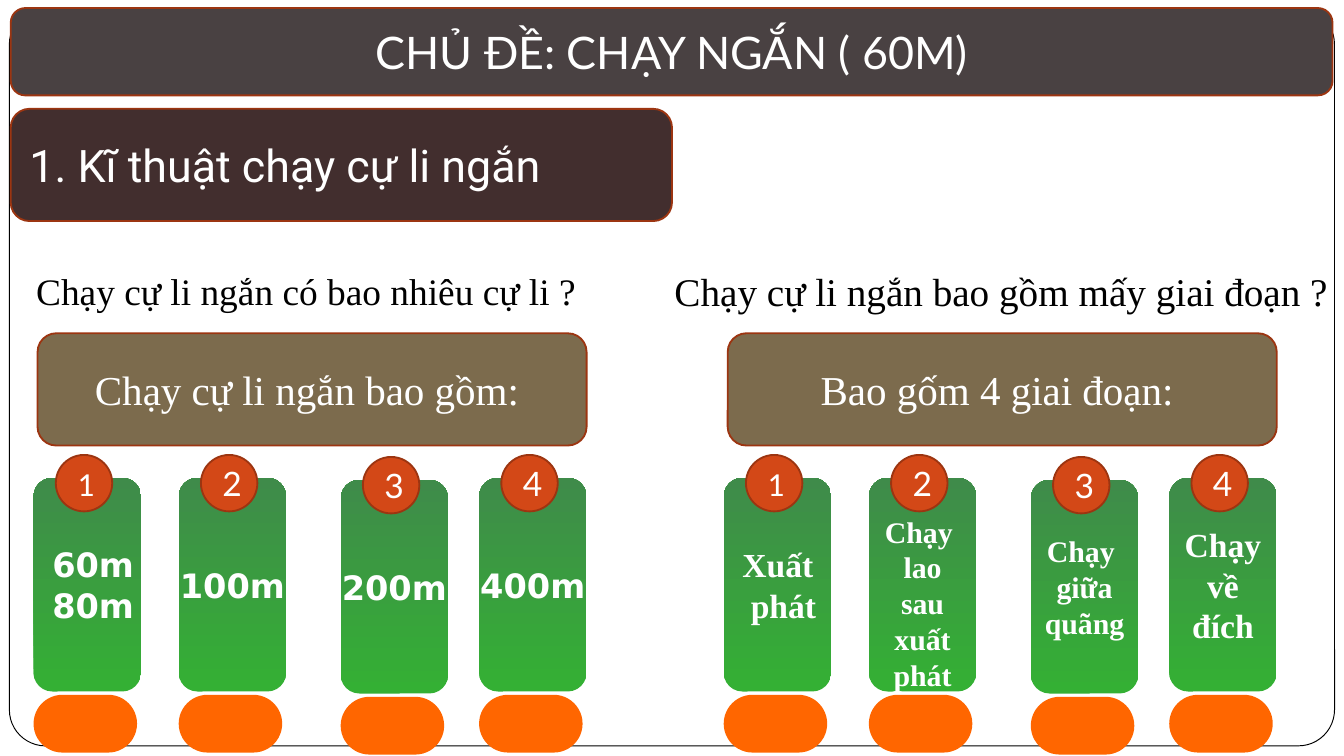
from pptx import Presentation
from pptx.dml.color import RGBColor
from pptx.enum.shapes import MSO_SHAPE as Preset
from pptx.enum.text import MSO_ANCHOR as Anchor, MSO_AUTO_SIZE as AutoSize, PP_ALIGN as Align
from pptx.util import Inches, Pt

CELL = Inches(0.1)
COLUMNS, ROWS = 100, 56.25
SERIF, SANS, LATO = "Times New Roman", "DejaVu Sans", "Lato"
WHITE, BLACK, RUST = "FFFFFF", "000000", "9C3511"
HEADER_AREA = (0.8, 0.6, 98.35, 6.5)
CARD_COLUMNS = (0, 10.8, 22.85, 33.15)
CARD_DROPS = (0, 0, 0.15, 0)
L, C = Align.LEFT, Align.CENTER

DISTANCES = [
    (("60m", "80m"), (L, L), 18),
    (("100m",), (C,), 18),
    (("200m",), (C,), 18),
    (("400m",), (C,), 18),
]
STAGES = [
    (("Xuất", " phát"), (L, C), 18),
    (("Chạy ", "lao", "sau", "xuất", "phát"), (C,) * 5, 16),
    (("Chạy ", "giữa", "quãng"), (C,) * 3, 16),
    (("Chạy", " về ", "đích"), (C,) * 3, 18),
]


def rgb(code):
    """Turn a hex string into a colour."""
    return RGBColor.from_string(code)


def grid(*cells):
    """Turn grid columns and rows into slide lengths."""
    return [round(cell * CELL) for cell in cells]


def paint(shape, fill, line=None, weight=1):
    """Give a shape its solid fill and its outline."""
    shape.fill.solid()
    shape.fill.fore_color.rgb = rgb(fill)
    if line:
        shape.line.color.rgb = rgb(line)
        shape.line.width = Pt(weight)
    else:
        shape.line.fill.background()


def write(shape, lines, size, font, aligns=(C,), color=WHITE, bold=False):
    """Set the lines of a shape and format each one."""
    frame = shape.text_frame
    frame.text = "\n".join(lines)
    for paragraph, align in zip(frame.paragraphs, aligns):
        paragraph.alignment = align
        for run in paragraph.runs:
            run.font.size = Pt(size)
            run.font.name = font
            run.font.bold = bold
            run.font.color.rgb = rgb(color)


def add_block(slide, preset, area, fill, line=None, weight=1, corner=None):
    """Add a flat preset shape with middle-anchored text."""
    block = slide.shapes.add_shape(preset, *grid(*area))
    block.shadow.inherit = False
    paint(block, fill, line, weight)
    if corner is not None:
        block.adjustments[0] = corner
    block.text_frame.word_wrap = True
    block.text_frame.vertical_anchor = Anchor.MIDDLE
    return block


def add_backdrop(slide):
    """Put the page frame and the header bar behind the title."""
    bar = add_block(slide, Preset.ROUNDED_RECTANGLE, HEADER_AREA, "494142", RUST)
    frame = add_block(slide, Preset.ROUNDED_RECTANGLE, (0.7, 0.6, 98.6, 54.9),
                      WHITE, BLACK, 0.5, 0.049)
    for backdrop in (bar, frame):
        slide.shapes._spTree.insert(2, backdrop._element)


def set_title(slide, text):
    """Write the title over the header bar."""
    title = slide.shapes.title
    title.left, title.top, title.width, title.height = grid(*HEADER_AREA)
    write(title, [text], 24, LATO)
    title.text_frame.vertical_anchor = Anchor.MIDDLE
    title.text_frame.auto_size = AutoSize.NONE


def add_question(slide, area, text, size):
    """Add a question above a panel."""
    question = slide.shapes.add_textbox(*grid(*area))
    question.text_frame.word_wrap = True
    question.text_frame.auto_size = AutoSize.SHAPE_TO_FIT_TEXT
    write(question, [text], size, SERIF, (L,), BLACK)


def add_card(slide, left, drop, number, answer, font):
    """Add a green card with its orange foot and numbered badge."""
    lines, aligns, size = answer
    card = add_block(slide, Preset.ROUNDED_RECTANGLE, (left, 35.55 + drop, 8, 15.9),
                     WHITE, corner=0.175)
    card.fill.gradient()
    card.fill.gradient_angle = 90
    for stop, color in zip(card.fill.gradient_stops, ("34B034", "3F8B4A")):
        stop.color.rgb = rgb(color)
    card.text_frame.word_wrap = False
    if len(lines) > 4:
        card.text_frame.margin_top, card.text_frame.margin_bottom = grid(2.7, 0)
    write(card, lines, size, font, aligns, bold=True)

    add_block(slide, Preset.ROUNDED_RECTANGLE, (left, 51.7 + drop, 7.7, 4.3),
              "FF6600", corner=0.5)
    badge = add_block(slide, Preset.OVAL, (left + 1.65, 33.85 + drop, 4.2, 4.2),
                      "D34817", RUST)
    write(badge, [str(number)], 18, "Calibri" if number == 1 else LATO)


def add_answers(slide, left, heading, answers, font):
    """Add a heading panel and its row of four cards."""
    panel = add_block(slide, Preset.ROUNDED_RECTANGLE, (left + 0.3, 24.8, 40.85, 8.35),
                      "7C6B4D", RUST)
    write(panel, [heading], 22, SERIF)
    cards = zip(CARD_COLUMNS, CARD_DROPS, answers)
    for number, (column, drop, answer) in enumerate(cards, 1):
        add_card(slide, left + column, drop, number, answer, font)


def add_section(slide, text):
    """Add the section heading under the header bar."""
    section = add_block(slide, Preset.ROUNDED_RECTANGLE, (0.8, 8.1, 49.2, 8.35),
                        "422E2E", RUST)
    write(section, [text], 24, "Roboto", (L,))


def main():
    """Build and save the lesson slide."""
    deck = Presentation()
    deck.slide_width, deck.slide_height = grid(COLUMNS, ROWS)
    slide = deck.slides.add_slide(deck.slide_layouts.get_by_name("Title Only"))
    add_backdrop(slide)
    set_title(slide, "CHỦ ĐỀ: CHẠY NGẮN ( 60M)")
    add_question(slide, (1.7, 19.5, 45.8, 4.4), "Chạy cự li ngắn có bao nhiêu cự li ?", 20)
    add_answers(slide, 2.5, "Chạy cự li ngắn bao gồm: ", DISTANCES, SANS)
    add_question(slide, (49.2, 19.4, 50.8, 4.5), "Chạy cự li ngắn bao gồm mấy giai đoạn ?", 21)
    add_answers(slide, 53.85, "Bao gốm 4 giai đoạn: ", STAGES, SERIF)
    add_section(slide, "1. Kĩ thuật chạy cự li ngắn")
    deck.save("out.pptx")


if __name__ == "__main__":
    main()
